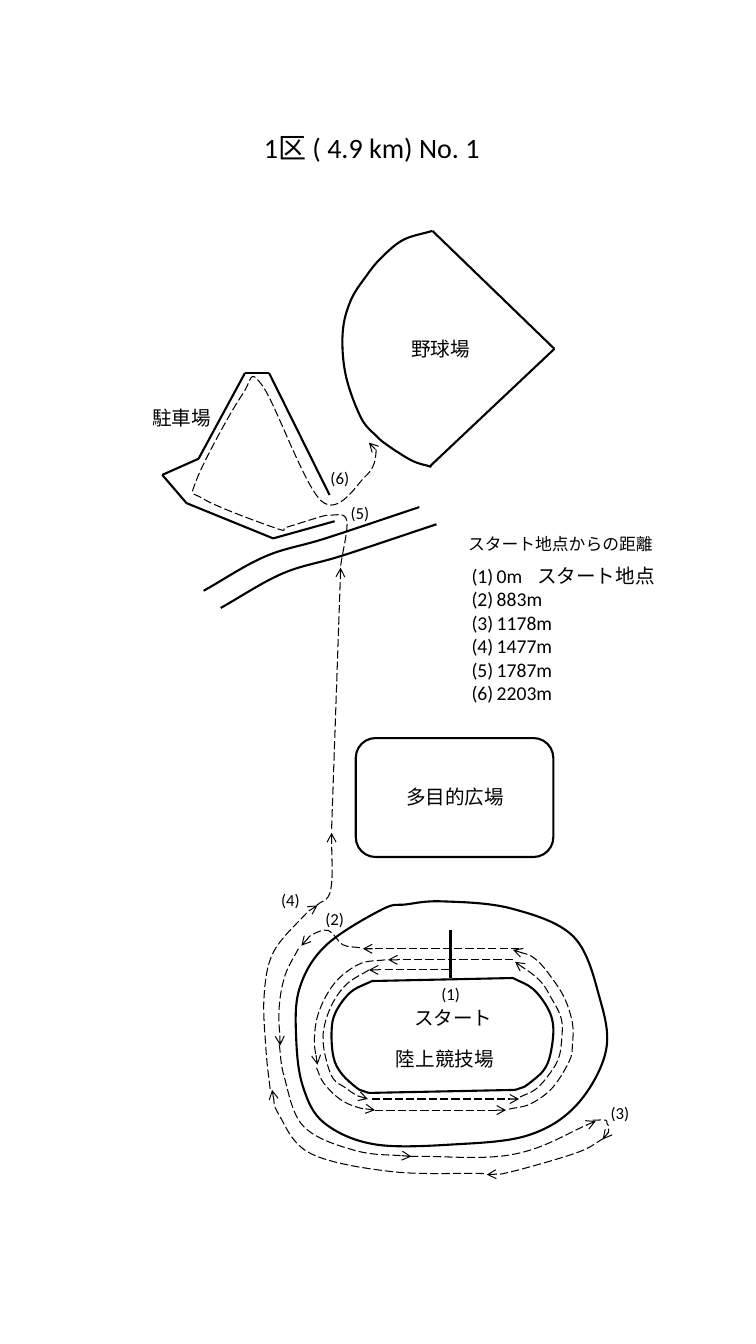
from dataclasses import dataclass
from typing import Any

from lxml.etree import SubElement
from pptx import Presentation
from pptx.dml.color import RGBColor
from pptx.enum.dml import MSO_LINE
from pptx.enum.shapes import MSO_CONNECTOR, MSO_SHAPE
from pptx.enum.text import MSO_AUTO_SIZE, PP_ALIGN
from pptx.oxml.ns import qn
from pptx.util import Pt

PX = 9144  # EMU per px, 100 px to the inch


@dataclass(frozen=True)
class Theme:
    ink: RGBColor = RGBColor(0, 0, 0)
    font: str = "Calibri"
    title: int = 20
    place: int = 14
    marker: int = 12
    wall: float = 1.5
    course: float = 0.75


THEME = Theme()


@dataclass
class Area:
    """A box on the slide; its parts are placed from its top left corner."""
    shapes: Any
    left: int
    top: int
    width: int
    height: int

    def at(self, x, y):
        return (self.left + x) * PX, (self.top + y) * PX

    def line(self, start, end, course=False):
        connector = self.shapes.add_connector(
            MSO_CONNECTOR.STRAIGHT, *self.at(*start), *self.at(*end))
        draw_outline(connector, course)

    def polyline(self, points):
        for start, end in zip(points, points[1:]):
            self.line(start, end)

    def curve(self, points, course=False, closed=False):
        """Draw a smooth curve through the points."""
        anchors = [self.at(*point) for point in points]
        builder = self.shapes.build_freeform(*anchors[0], scale=1.0)
        builder.add_line_segments(bezier_points(anchors, closed), close=False)
        outline = builder.convert_to_shape()
        bend_segments(outline, closed)
        outline.fill.background()
        draw_outline(outline, course)

    def text(self, words, x, y, width, height, size, align=PP_ALIGN.LEFT):
        """Add a text box with one paragraph per item and return its paragraphs."""
        frame = self.shapes.add_textbox(
            *self.at(x, y), width * PX, height * PX).text_frame
        frame.word_wrap = True
        frame.auto_size = MSO_AUTO_SIZE.SHAPE_TO_FIT_TEXT
        for index, item in enumerate(words):
            paragraph = frame.add_paragraph() if index else frame.paragraphs[0]
            paragraph.alignment = align
            run = paragraph.add_run()
            run.text = item
            run.font.size = Pt(size)
            run.font.name = THEME.font
            run.font.color.rgb = THEME.ink
        return frame.paragraphs

    def place(self, name, x, y, width):
        self.text([name], x, y, width, 34, THEME.place)

    def marker(self, number, x, y):
        self.text([f"({number})"], x, y, 41, 30, THEME.marker)


def bezier_points(anchors, closed):
    """Give two controls and an end for each Catmull-Rom segment."""
    if closed:
        knots = [anchors[-1], *anchors, *anchors[:2]]
    else:
        def mirror(end, inner):
            return tuple(2 * e - i for e, i in zip(end, inner))
        knots = [mirror(*anchors[:2]), *anchors, mirror(anchors[-1], anchors[-2])]
    points = []
    for before, start, end, after in zip(knots, knots[1:], knots[2:], knots[3:]):
        points.append(tuple(s + (e - b) / 6 for b, s, e in zip(before, start, end)))
        points.append(tuple(e - (a - s) / 6 for s, e, a in zip(start, end, after)))
        points.append(end)
    return points


def bend_segments(outline, closed):
    """Join each three straight segments into one cubic curve."""
    track = next(outline.element.iter(qn("a:path")))
    segments = track.findall(qn("a:lnTo"))
    for index in range(0, len(segments), 3):
        bend = SubElement(track, qn("a:cubicBezTo"))
        for segment in segments[index:index + 3]:
            bend.append(segment[0])
            track.remove(segment)
    if closed:
        SubElement(track, qn("a:close"))


def draw_outline(part, course=False):
    """Draw a solid wall, or a dashed course with an arrow at its end."""
    part.line.color.rgb = THEME.ink
    part.line.width = Pt(THEME.course if course else THEME.wall)
    properties = part.element.spPr
    if course:
        part.line.dash_style = MSO_LINE.LONG_DASH
        SubElement(properties.find(qn("a:ln")), qn("a:tailEnd"), type="arrow")
    SubElement(properties, qn("a:effectLst"))


def draw_title(area):
    area.text(["1区 ( 4.9 km) No. 1"], 0, 0, area.width, area.height, THEME.title)


def draw_ballpark(area):
    area.curve([(129, 29), (100, 38), (78, 56), (64, 73), (48, 98), (40, 130),
                (43, 172), (58, 214), (73, 232), (85, 242), (109, 257), (128, 263)])
    area.polyline([(129, 29), (250, 146), (126, 263)])
    area.place("野球場", 98, 129, 98)


def draw_parking(area):
    area.polyline([(232, 217), (171, 234), (85, 199), (61, 171), (97, 155),
                   (143, 70), (167, 70), (227, 191)])
    area.place("駐車場", 41, 98, 98)


def draw_road(area):
    for dx, dy in [(0, 0), (17, 17)]:
        area.curve([(x + dx, y + dy)
                    for x, y in [(2, 86), (63, 52), (123, 34), (216, 3)]])


def draw_plaza(area):
    plaza = area.shapes.add_shape(
        MSO_SHAPE.FLOWCHART_ALTERNATE_PROCESS,
        *area.at(0, 0), area.width * PX, area.height * PX)
    plaza.fill.background()
    draw_outline(plaza)
    area.place("多目的広場", 40, 42, 122)


def draw_stadium(area):
    area.curve([(239, 94), (307, 101), (369, 129), (395, 190), (401, 243), (372, 296),
                (324, 326), (251, 335), (172, 335), (122, 314), (101, 279), (94, 232),
                (97, 181), (123, 138), (179, 102), (203, 97)], closed=True)
    area.curve([(309, 170), (329, 181), (344, 201), (349, 220),
                (346, 246), (339, 262), (323, 276), (317, 279), (311, 281)])
    area.curve([(169, 173), (148, 184), (133, 204), (129, 223),
                (131, 249), (139, 265), (154, 279), (160, 282), (166, 284)])
    area.line((169, 173), (309, 170))
    area.line((166, 284), (311, 281))
    area.line((247, 122), (247, 170))
    area.marker(1, 228, 171)
    area.place("スタート", 201, 193, 103)
    area.place("陸上競技場", 183, 233, 127)


def draw_laps(area):
    for start, end in [((246, 162), (166, 162)), ((169, 290), (315, 290)),
                       ((309, 152), (185, 152)), ((172, 301), (302, 301)),
                       ((315, 141), (160, 141))]:
        area.line(start, end, course=True)
    for bend in [
        [(166, 162), (144, 176), (129, 197), (121, 222), (122, 244),
         (130, 269), (143, 279), (153, 286), (165, 290)],
        [(316, 288), (332, 280), (346, 264), (354, 250), (357, 234),
         (357, 211), (347, 190), (335, 172), (311, 154)],
        [(182, 152), (157, 156), (133, 174), (117, 202), (112, 230), (115, 256)],
        [(114, 259), (121, 274), (137, 290), (154, 298), (172, 301)],
        [(305, 300), (326, 295), (348, 279), (365, 252), (368, 235), (368, 215),
         (361, 192), (349, 172), (331, 151), (309, 142)],
    ]:
        area.curve(bend, course=True)


def draw_course(area):
    """Draw the way from the stadium, round it and up to the ballpark."""
    for stretch in [
        [(257, 640), (240, 637), (226, 623), (210, 627), (199, 638)],
        [(196, 641), (183, 667), (177, 699), (178, 737)],
        [(177, 736), (182, 768), (201, 817), (252, 841), (308, 847)],
        [(307, 847), (409, 845), (491, 812)],
        [(488, 811), (501, 811), (502, 814), (504, 817), (503, 826), (502, 828),
         (498, 830)],
        [(499, 829), (473, 843), (408, 862), (383, 865)],
        [(380, 864), (288, 862), (208, 844), (177, 806), (170, 781)],
        [(168, 780), (164, 742), (162, 689), (171, 645), (202, 608), (215, 598)],
        [(214, 598), (228, 583), (229, 526)],
        [(238, 261), (244, 216), (227, 211), (210, 215), (184, 223), (174, 224),
         (102, 195), (95, 176), (140, 92), (160, 82), (219, 197), (263, 172),
         (273, 149), (266, 139)],
    ]:
        area.curve(stretch, course=True)
    area.line((229, 522), (238, 263), course=True)
    for number, x, y in [(2, 213, 596), (3, 496, 789), (4, 169, 578),
                         (5, 238, 194), (6, 218, 159)]:
        area.marker(number, x, y)


def draw_distances(area):
    area.text(["スタート地点からの距離"], 0, 0, 214, 30, THEME.marker, PP_ALIGN.CENTER)
    distances = ["0m\tスタート地点", "883m", "1178m", "1477m", "1787m", "2203m"]
    for paragraph in area.text(distances, 9, 30, 214, 151, THEME.place):
        settings = paragraph._p.get_or_add_pPr()
        settings.set("marL", str(25 * PX))
        settings.set("indent", str(-25 * PX))
        SubElement(settings, qn("a:buFont"), typeface="+mj-lt")
        SubElement(settings, qn("a:buAutoNum"), type="arabicParenBoth")
        stops = SubElement(settings, qn("a:tabLst"))
        SubElement(stops, qn("a:tab"), pos=str(65 * PX), algn="l")


def main():
    presentation = Presentation()
    presentation.slide_width = 750 * PX
    presentation.slide_height = 1333 * PX
    shapes = presentation.slides.add_slide(presentation.slide_layouts[6]).shapes
    for draw, box in [
        (draw_title, (252, 125, 254, 44)),
        (draw_ballpark, (300, 200, 250, 263)),
        (draw_parking, (100, 300, 232, 234)),
        (draw_road, (200, 500, 233, 103)),
        (draw_plaza, (353, 732, 196, 118)),
        (draw_stadium, (200, 800, 401, 338)),
        (draw_laps, (200, 800, 401, 338)),
        (draw_course, (100, 300, 537, 866)),
        (draw_distances, (449, 524, 223, 181)),
    ]:
        draw(Area(shapes, *box))
    presentation.save("out.pptx")


if __name__ == "__main__":
    main()
